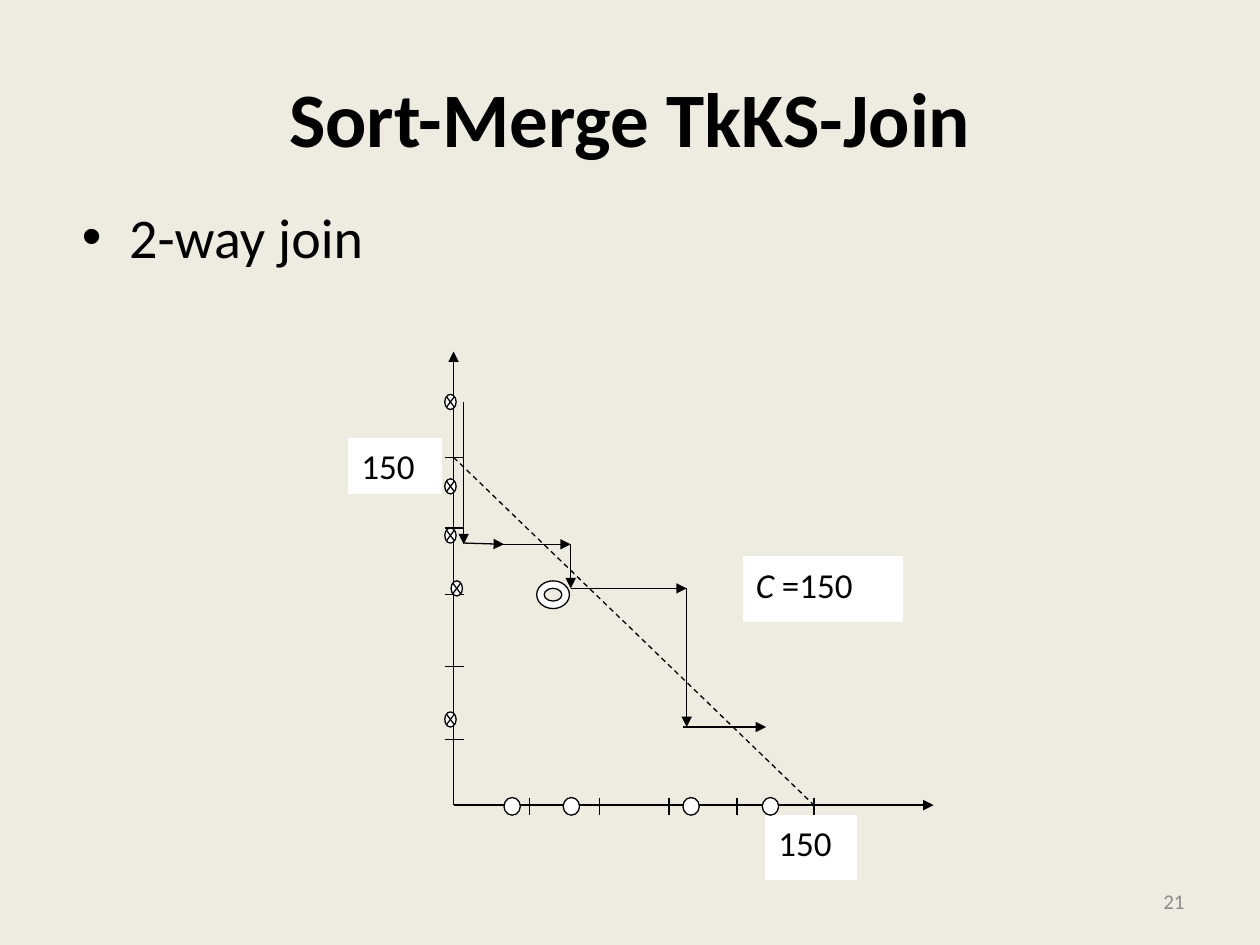
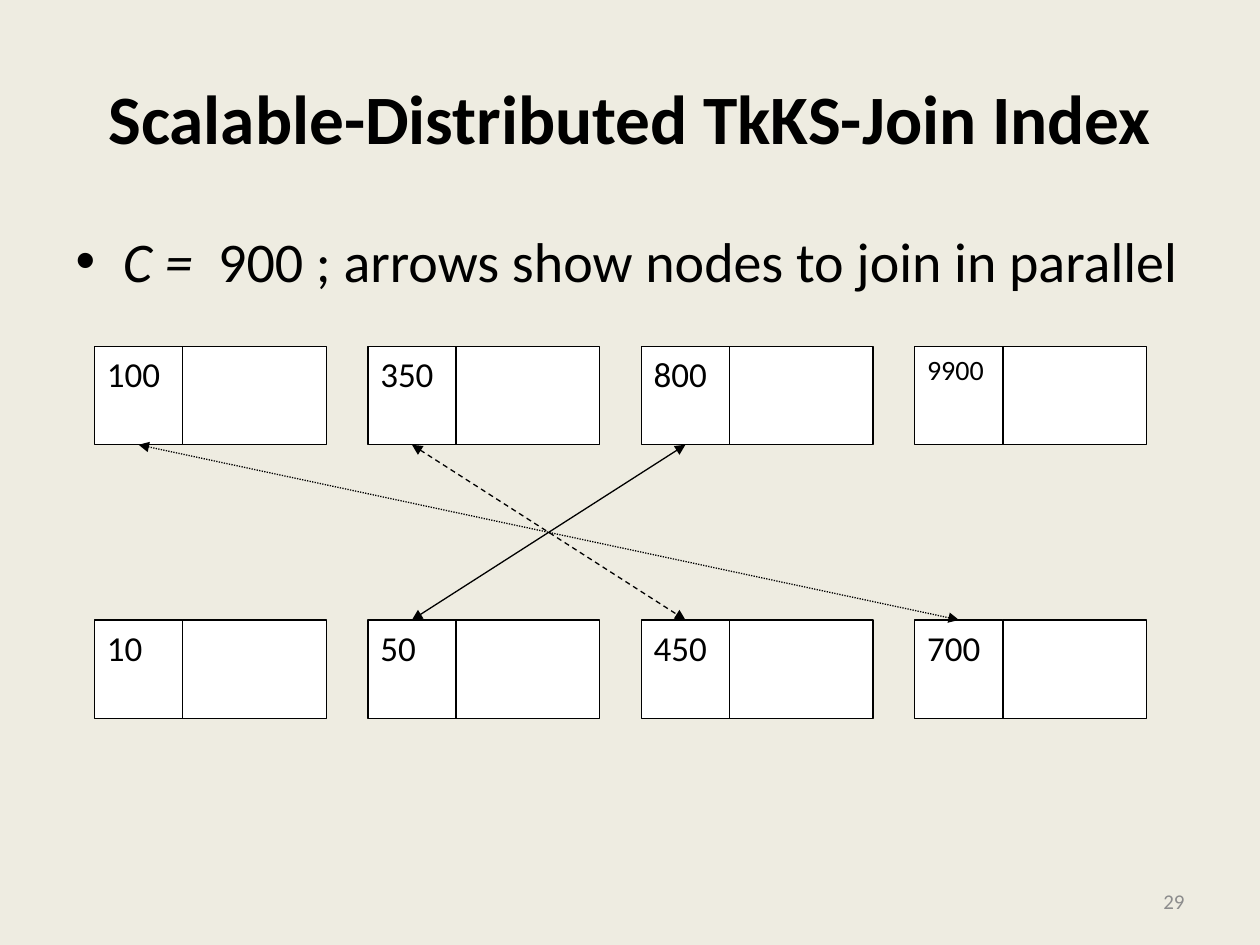
import pptx
import pptx.dml.color
import pptx.enum.dml
import pptx.enum.shapes
import pptx.enum.text
import pptx.oxml.ns
import pptx.util
from lxml import etree

Inches = pptx.util.Inches
Pt = pptx.util.Pt
SHAPE = pptx.enum.shapes.MSO_SHAPE
DASH = pptx.enum.dml.MSO_LINE
ALIGN = pptx.enum.text.PP_ALIGN
ANCHOR = pptx.enum.text.MSO_ANCHOR

FONT = "Calibri"
COLORS = {"background": "EEECE1", "ink": "000000", "paper": "FFFFFF", "number": "8C8C8C"}

# Slide texts: runs are (text, italic)
JOIN = {
    "title": "Sort-Merge TkKS-Join", "title_size": 44, "number": "21",
    "bullet": [("2-way join", False)], "bullet_box": (0.55, 1.56, 8.56, 0.67),
}
INDEX = {
    "title": "Scalable-Distributed TkKS-Join Index", "title_size": 39.6, "number": "29",
    "bullet": [("C = ", True), (" 900 ; arrows show nodes to join in parallel", False)],
    "bullet_box": (0.5, 1.75, 9, 0.67),
}

# Sort-merge plot
ORIGIN = (3.6, 6.39)
Y_AXIS_TOP, X_AXIS_END = 2.79, 7.41
Y_TICKS = [5.87, 5.29, 4.72, 4.19, 3.63]
X_TICKS = [4.2, 4.76, 5.31, 5.85, 6.46]
TICK_X, TICK_Y = (3.53, 3.68), (6.33, 6.47)
Y_ITEMS = [(3.53, 3.13), (3.53, 3.8), (3.58, 4.61), (3.53, 5.65), (3.53, 4.19)]
X_ITEMS = [4, 4.47, 5.42, 6.05]
MERGE_STEPS = [
    (3.68, 3.19, 3.68, 4.32), (3.68, 4.31, 4, 4.32), (3.99, 4.32, 4.53, 4.32),
    (4.53, 4.32, 4.53, 4.67), (4.53, 4.67, 5.45, 4.67), (5.45, 4.67, 5.45, 5.77),
    (5.42, 5.77, 6.08, 5.77),
]
PLOT_LABELS = [
    ((5.9, 4.42, 1.26, 0.51), [("C", True), (" =150", False)]),
    ((2.77, 3.48, 0.73, 0.44), [("150", False)]),
    ((6.08, 6.47, 0.72, 0.51), [("150", False)]),
]

# Index nodes
NODE_ROWS = [(2.75, ["100", "350", "800", "9900"]), (4.92, ["10", "50", "450", "700"])]
NODE_LEFT, NODE_PITCH, NODE_HEIGHT = 0.75, 2.17, 0.78
KEY_WIDTH, DATA_WIDTH = 0.7, 1.14
PARALLEL_JOINS = [(1, 2, DASH.DASH), (2, 1, None), (0, 3, DASH.ROUND_DOT)]  # upper, lower


def color(name):
    return pptx.dml.color.RGBColor.from_string(COLORS[name])


def write(frame, runs, size, ink="ink", align=ALIGN.LEFT, bold=False):
    paragraph = frame.paragraphs[0]
    paragraph.alignment = align
    font = paragraph.font
    font.name, font.size, font.bold = FONT, Pt(size), bold
    font.color.rgb = color(ink)
    for text, italic in runs:
        run = paragraph.add_run()
        run.text = text
        if italic:
            run.font.italic = True


def place(part, box):
    part.left, part.top, part.width, part.height = map(Inches, box)


def add_slide(prs, content):
    slide = prs.slides.add_slide(prs.slide_layouts[1])
    title, bullet = slide.placeholders
    place(title, (0.5, 0.3, 9, 1.25))
    title.text_frame.vertical_anchor = ANCHOR.MIDDLE
    write(title.text_frame, [(content["title"], False)], content["title_size"],
          align=ALIGN.CENTER, bold=True)
    place(bullet, content["bullet_box"])
    write(bullet.text_frame, content["bullet"], 32)
    number = slide.shapes.add_textbox(*map(Inches, (7.17, 6.95, 2.33, 0.4)))
    number.text_frame.word_wrap = True
    number.text_frame.vertical_anchor = ANCHOR.MIDDLE
    write(number.text_frame, [(content["number"], False)], 12, "number", ALIGN.RIGHT)
    return slide


def add_box(slide, kind, box, runs=(), size=20, outline="ink"):
    shape = slide.shapes.add_shape(kind, *map(Inches, box))
    shape.shadow.inherit = False
    shape.fill.solid()
    shape.fill.fore_color.rgb = color("paper")
    shape.line.color.rgb = color(outline)
    shape.line.width = Pt(0.75)
    if runs:
        shape.text_frame.vertical_anchor = ANCHOR.TOP
        write(shape.text_frame, runs, size)
    return shape


def add_line(slide, x1, y1, x2, y2, arrows=(), dash=None):
    line = slide.shapes.add_connector(pptx.enum.shapes.MSO_CONNECTOR.STRAIGHT,
                                      *map(Inches, (x1, y1, x2, y2)))
    line.line.color.rgb = color("ink")
    line.line.width = Pt(0.75)
    if dash:
        line.line.dash_style = dash
    for end in arrows:
        etree.SubElement(line.line._get_or_add_ln(), pptx.oxml.ns.qn("a:" + end), type="triangle")
    etree.SubElement(line._element.spPr, pptx.oxml.ns.qn("a:effectLst"))


def draw_plot(slide):
    # Axes, ticks and threshold
    x0, y0 = ORIGIN
    add_line(slide, x0, y0, x0, Y_AXIS_TOP, ["tailEnd"])
    add_line(slide, x0, y0, X_AXIS_END, y0, ["tailEnd"])
    for y in Y_TICKS:
        add_line(slide, TICK_X[0], y, TICK_X[1], y)
    for x in X_TICKS:
        add_line(slide, x, TICK_Y[0], x, TICK_Y[1])
    add_line(slide, x0, Y_TICKS[-1], X_TICKS[-1], y0, dash=DASH.DASH)

    # Labels, sorted items and merge steps
    for box, runs in PLOT_LABELS:
        add_box(slide, SHAPE.RECTANGLE, box, runs, outline="paper")
    for x, y in Y_ITEMS:
        add_box(slide, SHAPE.FLOWCHART_SUMMING_JUNCTION, (x, y, 0.09, 0.12))
    for x in X_ITEMS:
        add_box(slide, SHAPE.OVAL, (x, TICK_Y[0], 0.13, 0.14))
    for step in MERGE_STEPS:
        add_line(slide, *step, arrows=["tailEnd"])
    result = add_box(slide, SHAPE.DONUT, (4.26, 4.61, 0.26, 0.22))
    result.adjustments[0] = 0.27


def draw_nodes(slide):
    for top, keys in NODE_ROWS:
        for column, key in enumerate(keys):
            left = NODE_LEFT + column * NODE_PITCH
            add_box(slide, SHAPE.RECTANGLE, (left, top, KEY_WIDTH, NODE_HEIGHT),
                    [(key, False)], 16 if len(key) > 3 else 20)
            add_box(slide, SHAPE.RECTANGLE, (left + KEY_WIDTH, top, DATA_WIDTH, NODE_HEIGHT))

    # Arrows between key cells
    upper_y, lower_y = NODE_ROWS[0][0] + NODE_HEIGHT, NODE_ROWS[1][0]
    first_center = NODE_LEFT + KEY_WIDTH / 2
    for upper, lower, dash in PARALLEL_JOINS:
        add_line(slide, first_center + upper * NODE_PITCH, upper_y,
                 first_center + lower * NODE_PITCH, lower_y, ["headEnd", "tailEnd"], dash)


def main():
    prs = pptx.Presentation()
    prs.slide_width, prs.slide_height = Inches(10), Inches(7.5)
    background = prs.slide_master.background.fill
    background.solid()
    background.fore_color.rgb = color("background")
    draw_plot(add_slide(prs, JOIN))
    draw_nodes(add_slide(prs, INDEX))
    prs.save("out.pptx")


if __name__ == "__main__":
    main()
